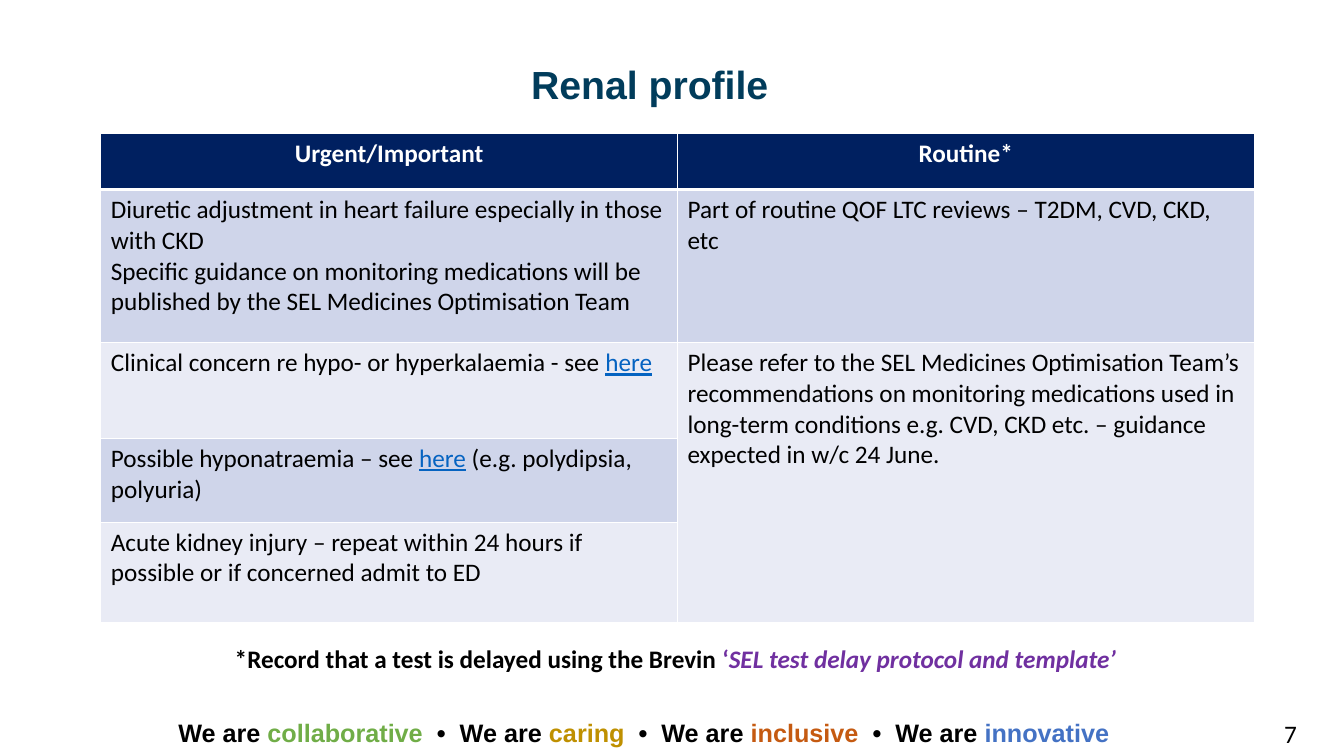
import pptx
import pptx.util
import pptx.dml.color
import pptx.enum.text
import pptx.oxml.ns
from lxml import etree

Inches = pptx.util.Inches
ALIGN = pptx.enum.text.PP_ALIGN
ANCHOR = pptx.enum.text.MSO_ANCHOR

BLACK, WHITE, NAVY = "000000", "FFFFFF", "002060"
LINK, PURPLE = "0563C1", "7030A0"
BANDS = ["CFD5EA", "E9EBF5"]

TITLE = "Renal profile"
HEADERS = ["Urgent/Important", "Routine*"]
URGENT = [
    [["Diuretic adjustment in heart failure especially in those with CKD"],
     ["Specific guidance on monitoring medications will be published by the SEL Medicines Optimisation Team"]],
    [["Clinical concern re hypo- or hyperkalaemia - see ", "here"]],
    [["Possible hyponatraemia – see ", "here", " (e.g. polydipsia, polyuria)"]],
    [["Acute kidney injury – repeat within 24 hours if possible or if concerned admit to ED"]],
]
ROUTINE = [
    [["Part of routine QOF LTC reviews – T2DM, CVD, CKD, etc"]],
    [["Please refer to the SEL Medicines Optimisation Team’s recommendations on monitoring "
      "medications used in long-term conditions e.g. CVD, CKD etc. – guidance expected in w/c 24 June."]],
]
NOTE = [
    ("*Record that a test is delayed using the Brevin ", BLACK, False),
    ("‘", PURPLE, False),
    ("SEL test delay protocol and template’", PURPLE, True),
]
VALUES = [("collaborative", "70AD47"), ("caring", "BF9000"),
          ("inclusive", "C55A11"), ("innovative", "4472C4")]
PAGE = "7"
ROW_HEIGHTS = [0.56, 1.52, 0.95, 0.83, 1]
COL_WIDTH = 5.72


def rgb(value):
    return pptx.dml.color.RGBColor.from_string(value)


def add_run(p, text, color=BLACK, size=18, font="Calibri", bold=False, italic=False, underline=False):
    r = p.add_run()
    r.text = text
    r.font.name = font
    r.font.size = pptx.util.Pt(size)
    r.font.bold = bold
    r.font.italic = italic
    r.font.underline = underline
    r.font.color.rgb = rgb(color)


def add_text(s, left, top, width, height, align=ALIGN.LEFT, anchor=ANCHOR.TOP):
    tf = s.shapes.add_textbox(Inches(left), Inches(top), Inches(width), Inches(height)).text_frame
    tf.word_wrap = True
    tf.vertical_anchor = anchor
    p = tf.paragraphs[0]
    p.alignment = align
    return p


def style_cell(cell, fill, bottom=1, top=1):
    cell.fill.solid()
    cell.fill.fore_color.rgb = rgb(fill)
    tcPr = cell._tc.get_or_add_tcPr()
    qn = pptx.oxml.ns.qn
    for i, (side, width) in enumerate([("L", 1), ("R", 1), ("T", top), ("B", bottom)]):
        ln = etree.Element(qn("a:ln" + side), w=str(pptx.util.Pt(width)))
        solid = etree.SubElement(ln, qn("a:solidFill"))
        etree.SubElement(solid, qn("a:srgbClr"), val=WHITE)
        tcPr.insert(i, ln)


def fill_cell(cell, paragraphs):
    tf = cell.text_frame
    for i, texts in enumerate(paragraphs):
        p = tf.add_paragraph() if i else tf.paragraphs[0]
        for text in texts:
            is_link = text == "here"
            add_run(p, text, LINK if is_link else BLACK, underline=is_link)


def add_profile_table(s):
    table = s.shapes.add_table(len(ROW_HEIGHTS), 2, Inches(1), Inches(1.32),
                               Inches(2 * COL_WIDTH), Inches(sum(ROW_HEIGHTS))).table
    for row, height in zip(table.rows, ROW_HEIGHTS):
        row.height = Inches(height)
    for col, header in enumerate(HEADERS):
        table.columns[col].width = Inches(COL_WIDTH)
        cell = table.cell(0, col)
        style_cell(cell, NAVY, bottom=3)
        p = cell.text_frame.paragraphs[0]
        p.alignment = ALIGN.CENTER
        add_run(p, header, WHITE, bold=True)
        for row in range(1, len(ROW_HEIGHTS)):
            band = min(row, 2) if col else row
            style_cell(table.cell(row, col), BANDS[(band - 1) % 2], top=3 if row == 1 else 1)
    table.cell(2, 1).merge(table.cell(4, 1))
    for col, entries in enumerate([URGENT, ROUTINE]):
        for row, paragraphs in enumerate(entries, 1):
            fill_cell(table.cell(row, col), paragraphs)


def main():
    prs = pptx.Presentation()
    prs.slide_width, prs.slide_height = Inches(13.33), Inches(7.5)
    s = prs.slides.add_slide(prs.slide_layouts[6])

    p = add_text(s, 1.67, 7.07, 10, 0.4)
    for i, (value, color) in enumerate(VALUES):
        add_run(p, "  •  We are " if i else "We are ", font="Arial", bold=True)
        add_run(p, value, color, font="Arial", bold=True)

    add_run(add_text(s, 11.11, 7.08, 1.85, 0.4, ALIGN.RIGHT), PAGE)
    add_profile_table(s)

    p = add_text(s, 2.33, 0.5, 8.23, 0.72, ALIGN.CENTER, ANCHOR.MIDDLE)
    p.line_spacing = 0.9
    add_run(p, TITLE, "013C5B", 28, "Arial", bold=True)

    p = add_text(s, 2.23, 6.33, 9.44, 0.4)
    for text, color, italic in NOTE:
        add_run(p, text, color, bold=True, italic=italic)

    prs.save("out.pptx")


if __name__ == "__main__":
    main()
